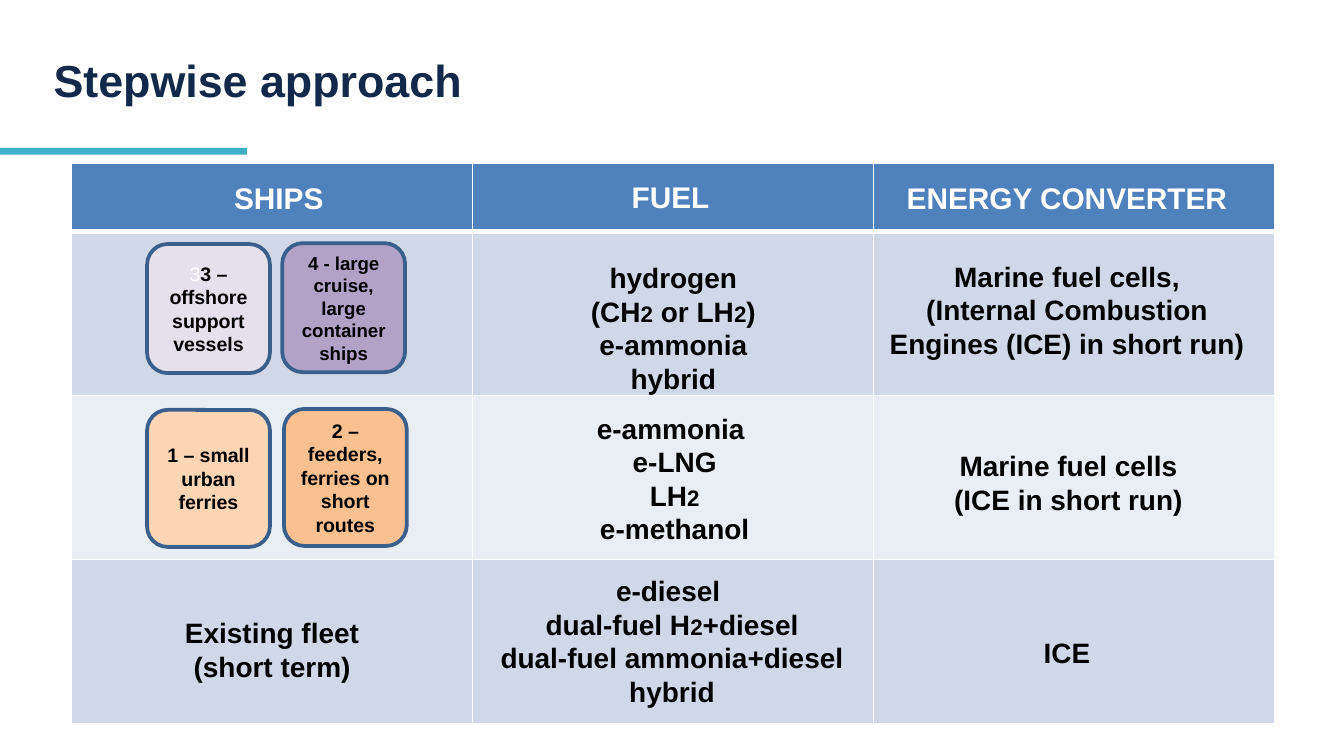
import pptx
import pptx.dml.color
import pptx.enum.shapes
import pptx.enum.text
import pptx.oxml
import pptx.oxml.ns
import pptx.util
from dataclasses import dataclass

Pt = pptx.util.Pt
Anchor = pptx.enum.text.MSO_ANCHOR
Align = pptx.enum.text.PP_ALIGN
Shape = pptx.enum.shapes.MSO_SHAPE


@dataclass(frozen=True)
class Theme:
    """Colours and type sizes of the slide."""
    font: str = "Arial"
    navy: str = "13294B"
    teal: str = "3EB1C8"
    white: str = "FFFFFF"
    black: str = "000000"
    header: str = "4F81BD"
    bands: tuple = ("D0D8E8", "E9EDF4")
    outline: str = "3A5F8C"
    title_size: float = 24
    header_size: float = 16
    body_size: float = 15
    small_size: float = 12
    ship_size: float = 10.5
    tight_size: float = 10


THEME = Theme()
COLUMN_WIDTH = 214.8
HEADER_HEIGHT = 36.7
ROW_HEIGHT = 88

HEADINGS = [
    ("SHIPS", (87.8, 92.9, 123.1, 26.6)),
    ("FUEL", (282.2, 92.2, 154.1, 26.6)),
    ("ENERGY CONVERTER", (469.4, 92.9, 204.5, 26.6)),
]
ENTRIES = [
    (["Existing fleet (short term)"], (71.3, 326.2, 149, 43.9)),
    (["hydrogen", "(CH|2| or LH|2|)", "e-ammonia", "hybrid"],
     (258.5, 136.1, 204.5, 79.9)),
    (["e-ammonia ", "e-LNG", "LH|2", "e-methanol"],
     (276.5, 216.7, 169.9, 79.9)),
    (["e-diesel ", "dual-fuel H|2|+diesel", "dual-fuel ammonia+diesel", "hybrid"],
     (259.9, 303.8, 200.2, 79.9)),
    (["Marine fuel cells,", "(Internal Combustion Engines (ICE) in short run)"],
     (469.4, 135.4, 204.5, 61.9)),
    (["Marine fuel cells", "(ICE in short run)"], (503.3, 236.9, 138.2, 43.9)),
    (["ICE"], (527, 337, 89.3, 25.2)),
]
SHIPS = [
    ("3 – offshore support vessels", "E6E0EC", THEME.ship_size, (78.8, 130.8, 65.8, 69.1)),
    ("1 – small urban ferries", "FCD5B5", THEME.ship_size, (78.8, 219.6, 65.8, 73.4)),
    ("4 - large cruise, large container ships", "B3A2C7", THEME.tight_size,
     (151.2, 130.3, 65.8, 69.1)),
    ("2 – feeders, ferries on short routes", "FAC090", THEME.ship_size,
     (152.1, 219.1, 65.8, 73.4)),
]


def rgb(code):
    """Return the colour for a hex code."""
    return pptx.dml.color.RGBColor.from_string(code)


def add_span(para, text, *, size, color=THEME.black, bold=True):
    """Add one formatted run to a paragraph."""
    span = para.add_run()
    span.text = text
    span.font.name = THEME.font
    span.font.size = Pt(size)
    span.font.bold = bold
    span.font.color.rgb = rgb(color)


def add_text(page, lines, place, *, size=THEME.body_size, color=THEME.black,
             align=Align.CENTER, anchor=Anchor.TOP, grow=True):
    """Add a text box whose lines mark small digits with bars."""
    frame = page.shapes.add_textbox(*map(Pt, place)).text_frame
    frame.word_wrap = True
    frame.vertical_anchor = anchor
    if grow:
        frame.auto_size = pptx.enum.text.MSO_AUTO_SIZE.SHAPE_TO_FIT_TEXT
    for number, line in enumerate(lines):
        para = frame.add_paragraph() if number else frame.paragraphs[0]
        para.alignment = align
        for index, piece in enumerate(line.split("|")):
            if piece:
                add_span(para, piece, color=color,
                         size=THEME.small_size if index % 2 else size)


def add_block(page, kind, place, fill, outline=None):
    """Add a filled shape with an optional outline."""
    box = page.shapes.add_shape(kind, *map(Pt, place))
    box.shadow.inherit = False
    box.fill.solid()
    box.fill.fore_color.rgb = rgb(fill)
    if outline:
        box.line.color.rgb = rgb(outline)
        box.line.width = Pt(2)
    else:
        box.line.fill.background()
    return box


def add_ship(page, text, fill, size, place, prefix=""):
    """Add a rounded card naming a ship group."""
    frame = add_block(page, Shape.ROUNDED_RECTANGLE, place, fill, THEME.outline).text_frame
    frame.word_wrap = True
    frame.vertical_anchor = Anchor.MIDDLE
    frame.margin_left = frame.margin_right = Pt(5.5)
    para = frame.paragraphs[0]
    para.alignment = Align.CENTER
    if prefix:
        add_span(para, prefix, size=size, color=THEME.white, bold=False)
    add_span(para, text, size=size)


def style_cell(cell, fill, top=1, bottom=1):
    """Give a cell white borders and a solid fill."""
    properties = cell._tc.get_or_add_tcPr()
    for side, width in (("L", 1), ("R", 1), ("T", top), ("B", bottom)):
        properties.append(pptx.oxml.parse_xml(
            f'<a:ln{side} {pptx.oxml.ns.nsdecls("a")} w="{Pt(width)}"><a:solidFill>'
            f'<a:srgbClr val="{THEME.white}"/></a:solidFill></a:ln{side}>'))
    cell.fill.solid()
    cell.fill.fore_color.rgb = rgb(fill)


def add_grid(page):
    """Add the banded table behind the entries."""
    heights = [HEADER_HEIGHT] + [ROW_HEIGHT] * 3
    place = (38.4, 87.2, 3 * COLUMN_WIDTH, sum(heights))
    table = page.shapes.add_table(4, 3, *map(Pt, place)).table
    for column in table.columns:
        column.width = Pt(COLUMN_WIDTH)
    for number, height in enumerate(heights):
        table.rows[number].height = Pt(height)
        fill = THEME.bands[(number - 1) % 2] if number else THEME.header
        for cell in table.rows[number].cells:
            style_cell(cell, fill, top=3 if number == 1 else 1,
                       bottom=1 if number else 3)


def main():
    """Build and save the slide."""
    deck = pptx.Presentation()
    deck.slide_width, deck.slide_height = Pt(720), Pt(405)
    page = deck.slides.add_slide(deck.slide_layouts[6])
    add_block(page, Shape.RECTANGLE, (0, 79.2, 132.5, 3.6), THEME.teal)
    add_grid(page)
    add_text(page, ["Stepwise approach"], (21.6, 17.3, 584.6, 43.2),
             size=THEME.title_size, color=THEME.navy, align=Align.LEFT,
             anchor=Anchor.BOTTOM, grow=False)
    for number, ship in enumerate(SHIPS):
        add_ship(page, *ship, prefix="" if number else "3")
    for lines, place in ENTRIES:
        add_text(page, lines, place)
    for heading, place in HEADINGS:
        add_text(page, [heading], place, size=THEME.header_size, color=THEME.white)
    deck.save("out.pptx")


if __name__ == "__main__":
    main()
